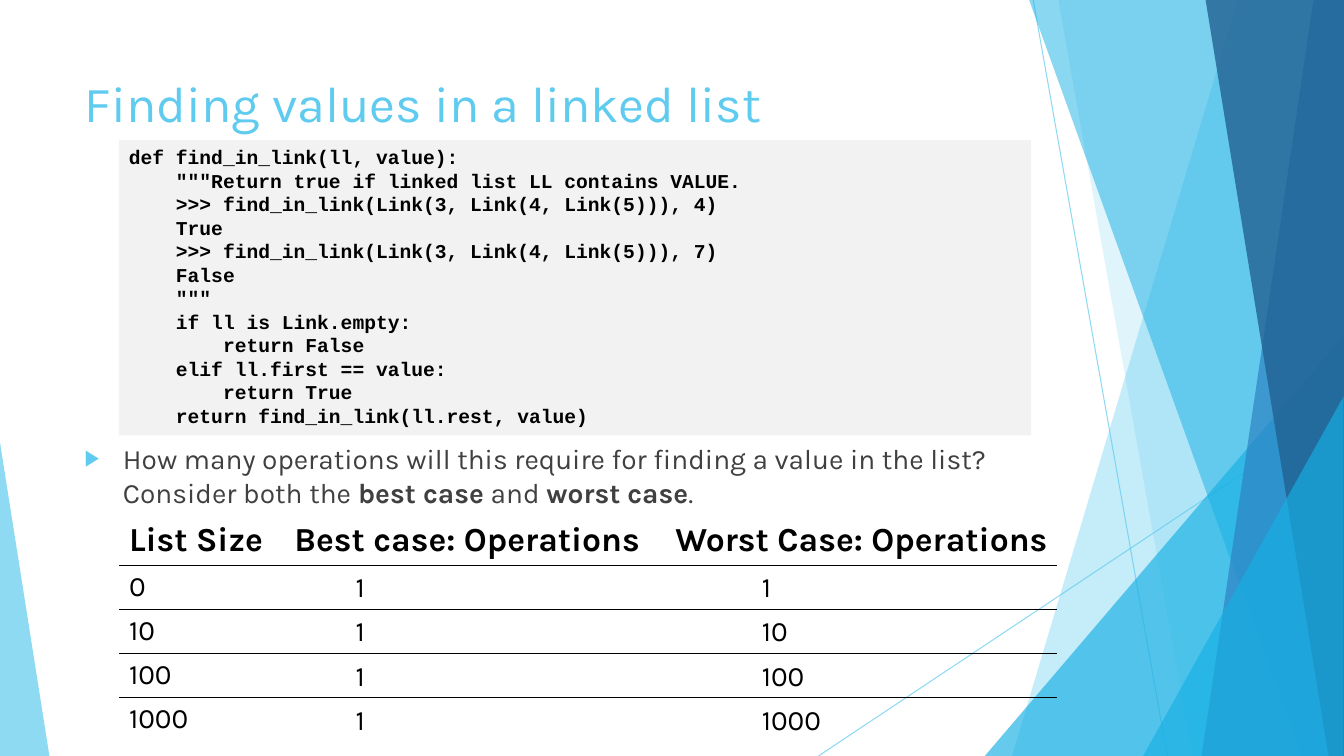
"""Build the slide on the cost of finding values in a linked list."""
from dataclasses import dataclass

from lxml.etree import SubElement
from pptx import Presentation
from pptx.dml.color import RGBColor
from pptx.enum.shapes import MSO_CONNECTOR, MSO_SHAPE
from pptx.enum.text import MSO_ANCHOR, MSO_AUTO_SIZE, PP_ALIGN
from pptx.oxml import parse_xml
from pptx.oxml.ns import nsdecls, qn
from pptx.util import Inches, Pt


@dataclass(frozen=True)
class Theme:
    sky: str = "5FCBEF"
    cyan: str = "17B0E4"
    blue: str = "2E83C3"
    navy: str = "226292"
    ink: str = "000000"
    body: str = "404040"
    panel: str = "F2F2F2"
    font: str = "Karla"
    mono: str = "Courier New"
    title_size: float = 36
    header_size: float = 24
    body_size: float = 20
    code_size: float = 14
    code_pitch: float = 16.8


THEME = Theme()
CELL = Inches(0.1)
COLUMNS, ROWS = 133.33, 75


def grid(*cells):
    return [round(cell * CELL) for cell in cells]


def write(paragraph, text, size=THEME.body_size, color=THEME.ink, bold=False, font=THEME.font):
    run = paragraph.add_run()
    run.text = text
    run.font.size = Pt(size)
    run.font.name = font
    run.font.bold = bold
    run.font.color.rgb = RGBColor.from_string(color)


presentation = Presentation()
presentation.slide_width, presentation.slide_height = grid(COLUMNS, ROWS)
slide = presentation.slides.add_slide(presentation.slide_layouts[1])
shapes = slide.shapes

tinted = []
for start, end in [((102.5, 0), (115.8, ROWS)), ((COLUMNS, 40.3), (81.2, ROWS))]:
    ray = shapes.add_connector(MSO_CONNECTOR.STRAIGHT, *grid(*start, *end))
    ray.line.width = Pt(0.75)
    SubElement(ray.element.spPr, qn("a:effectLst"))
    tinted.append((ray.line.fill, THEME.sky, 70))

facets = [
    ("band", (122.8, 100.4), THEME.sky, 36),
    ("band", (105, 118.3), THEME.sky, 20),
    ("peak", (97.7, 33.3, 35.6, 1), THEME.cyan, 66),
    ("band", (102.1, 129.1), THEME.cyan, 50),
    ("band", (130.3, 119.2), THEME.blue, 70),
    ("band", (119.6, 131.8), THEME.navy, 80),
    ("peak", (113.4, 39.3, 19.9, 1), THEME.cyan, 66),
    ("peak", (0, 43.9, 4.9, 0), THEME.sky, 70),
]
for kind, outline, color, opacity in facets:
    if kind == "band":
        top, bottom = outline
        corners = [grid(COLUMNS, 0), grid(COLUMNS, ROWS), grid(bottom, ROWS)]
        builder = shapes.build_freeform(*grid(top, 0))
        builder.add_line_segments(corners, close=True)
        facet = builder.convert_to_shape()
    else:
        left, top, width, apex = outline
        facet = shapes.add_shape(MSO_SHAPE.ISOSCELES_TRIANGLE, *grid(left, top, width, ROWS - top))
        facet.adjustments[0] = apex
    facet.shadow.inherit = False
    facet.line.fill.background()
    tinted.append((facet.fill, color, opacity))

for fill, color, opacity in tinted:
    fill.solid()
    fill.fore_color.rgb = RGBColor.from_string(color)
for tint, (fill, color, opacity) in zip(shapes.element.iter(qn("a:srgbClr")), tinted):
    SubElement(tint, qn("a:alpha"), val=str(opacity * 1000))

title, question = shapes.title, slide.placeholders[1]
for holder, top, height in [(title, 6.7, 14.4), (question, 43.3, 8.6)]:
    holder.left, holder.top, holder.width, holder.height = grid(7.4, top, 94, height)
    holder.text_frame.auto_size = MSO_AUTO_SIZE.NONE
    holder.text_frame.vertical_anchor = MSO_ANCHOR.TOP
    holder.text_frame.paragraphs[0].alignment = PP_ALIGN.LEFT
    shapes.element.append(holder.element)

write(title.text_frame.paragraphs[0], "Finding values in a linked list",
      size=THEME.title_size, color=THEME.sky)

prompt = question.text_frame.paragraphs[0]
prompt.space_before = Pt(10)
for text, bold in [
    ("How many operations will this require for finding a value in the list? Consider both the ", False),
    ("best case", True),
    (" and ", False),
    ("worst case", True),
    (".", False),
]:
    write(prompt, text, color=THEME.body, bold=bold)
bullet = prompt._p.get_or_add_pPr()
bullet.set("marL", str(Inches(0.38)))
bullet.set("indent", str(-Inches(0.38)))
SubElement(SubElement(bullet, qn("a:buClr")), qn("a:srgbClr"), val=THEME.sky)
SubElement(bullet, qn("a:buSzPct"), val="80000")
SubElement(bullet, qn("a:buFont"), typeface="Arial")
SubElement(bullet, qn("a:buChar"), char="▶")

CODE = '''def find_in_link(ll, value):
    """Return true if linked list LL contains VALUE.
    >>> find_in_link(Link(3, Link(4, Link(5))), 4)
    True
    >>> find_in_link(Link(3, Link(4, Link(5))), 7)
    False
    """
    if ll is Link.empty:
        return False
    elif ll.first == value:
        return True
    return find_in_link(ll.rest, value)'''
listing = shapes.add_shape(MSO_SHAPE.RECTANGLE, *grid(11.8, 13.9, 90.5, 29.3))
listing.shadow.inherit = False
listing.line.fill.background()
listing.fill.solid()
listing.fill.fore_color.rgb = RGBColor.from_string(THEME.panel)
listing.text_frame.word_wrap = True
listing.text_frame.vertical_anchor = MSO_ANCHOR.TOP
for number, statement in enumerate(CODE.splitlines()):
    line = listing.text_frame.add_paragraph() if number else listing.text_frame.paragraphs[0]
    line.alignment = PP_ALIGN.LEFT
    line.line_spacing = Pt(THEME.code_pitch)
    write(line, statement, size=THEME.code_size, bold=True, font=THEME.mono)

HEADERS = ["List Size", "Best case: Operations", "Worst Case: Operations"]
COSTS = [("0", "1", "1"), ("10", "1", "10"), ("100", "1", "100"), ("1000", "1", "1000")]
costs = shapes.add_table(len(COSTS) + 1, len(HEADERS), *grid(11.8, 51.2, 93.1, 22.4)).table
costs.horz_banding = False
costs._tbl.tblPr.find(qn("a:tableStyleId")).text = "{2D5ABB26-0587-4C30-8999-92F81FD0307C}"
for column, width in zip(costs.columns, grid(16.4, 37.8, 38.9)):
    column.width = width
for index, row in enumerate(costs.rows):
    row.height = grid(4.37 if index else 4.9)[0]
    for cell in row.cells:
        cell.fill.background()
        cell.margin_right = 0
        if index < len(COSTS):
            cell._tc.get_or_add_tcPr().insert(0, parse_xml(
                f'<a:lnB {nsdecls("a")} w="{Pt(1)}"><a:solidFill>'
                f'<a:srgbClr val="{THEME.ink}"/></a:solidFill></a:lnB>'))
for column, header in enumerate(HEADERS):
    write(costs.cell(0, column).text_frame.paragraphs[0], header, size=THEME.header_size, bold=True)

for index, (list_size, *operations) in enumerate(COSTS):
    write(costs.cell(index + 1, 0).text_frame.paragraphs[0], list_size)
    for left, count in zip((34.3, 74.6), operations):
        answer = shapes.add_textbox(*grid(left, 56 + 4.4 * index, 2 + 1.47 * len(count), 4.4))
        answer.text_frame.word_wrap = False
        answer.text_frame.auto_size = MSO_AUTO_SIZE.SHAPE_TO_FIT_TEXT
        write(answer.text_frame.paragraphs[0], count)

presentation.save("out.pptx")
